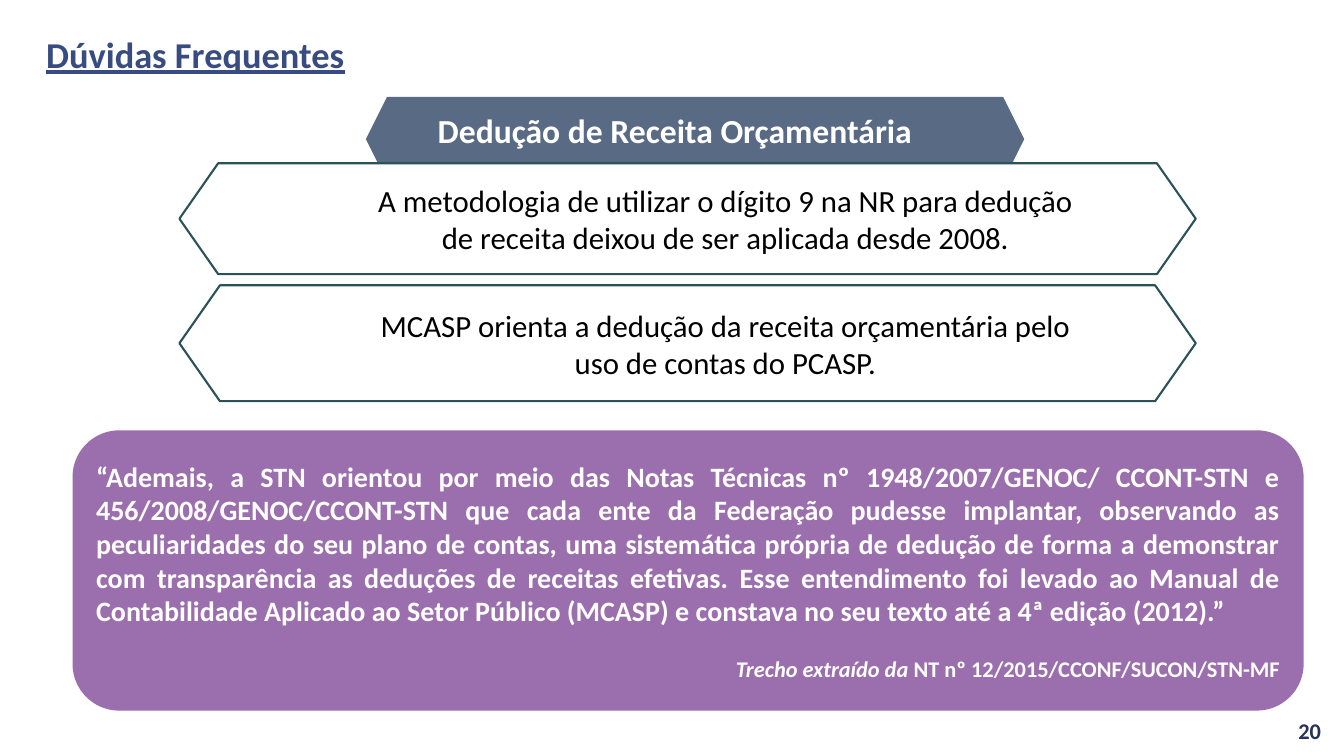
from dataclasses import dataclass

from pptx import Presentation
from pptx import util as u
from pptx.dml.color import RGBColor
from pptx.enum import shapes, text


@dataclass(frozen=True)
class Theme:
    font: str = "Calibri"
    title: str = "384C81"
    number: str = "253356"
    heading_fill: str = "596A85"
    outline: str = "2B5259"
    quote_fill: str = "9B6FAD"
    white: str = "FFFFFF"
    black: str = "000000"
    title_size: int = 26
    heading_size: int = 24
    statement_size: int = 22
    quote_size: int = 20
    small_size: int = 16


@dataclass(frozen=True)
class Box:
    left: float
    top: float
    width: float
    height: float

    def inner(self, left, top, width, height):
        """Return an inner box given in percent of this one."""
        return Box(self.left + self.width * left / 100,
                   self.top + self.height * top / 100,
                   self.width * width / 100, self.height * height / 100)

    def emu(self):
        return [u.Inches(side) for side in
                (self.left, self.top, self.width, self.height)]


THEME = Theme()
SLIDE = Box(0, 0, 13.33, 7.5)
ALIGN = text.PP_ALIGN
ANCHOR = text.MSO_ANCHOR
SHAPE = shapes.MSO_SHAPE

STATEMENTS = [
    (21.85, 36.42, "A metodologia de utilizar o dígito 9 na NR para dedução "
                   "de receita deixou de ser aplicada desde 2008."),
    (61.92, 38.08, "MCASP orienta a dedução da receita orçamentária pelo "
                   "uso de contas do PCASP."),
]
QUOTE = (
    "“Ademais, a STN orientou por meio das Notas Técnicas nº "
    "1948/2007/GENOC/ CCONT-STN e 456/2008/GENOC/CCONT-STN que cada ente da "
    "Federação pudesse implantar, observando as peculiaridades do seu plano "
    "de contas, uma sistemática própria de dedução de forma a demonstrar com "
    "transparência as deduções de receitas efetivas. Esse entendimento foi "
    "levado ao Manual de Contabilidade Aplicado ao Setor Público (MCASP) e "
    "constava no seu texto até a 4ª edição (2012).”"
)


def color(value):
    return RGBColor.from_string(value)


def add_span(para, words, size, ink, bold=True, italic=False, underline=False):
    span = para.add_run()
    span.text = words
    font = span.font
    font.name, font.size, font.color.rgb = THEME.font, u.Pt(size), color(ink)
    font.bold, font.italic, font.underline = bold, italic, underline


def prepare_frame(shape, anchor, align):
    """Set up the text frame and return its first paragraph."""
    frame = shape.text_frame
    frame.word_wrap = True
    frame.vertical_anchor = anchor
    para = frame.paragraphs[0]
    para.alignment = align
    return para


def add_panel(page, box, kind, fill, outline=None):
    panel = page.shapes.add_shape(kind, *box.emu())
    panel.shadow.inherit = False
    panel.fill.solid()
    panel.fill.fore_color.rgb = color(fill)
    if outline:
        panel.line.color.rgb = color(outline)
        panel.line.width = u.Pt(1.5)
    else:
        panel.line.fill.background()
    return panel


def add_label(page, box, words, size, ink, align, underline=False):
    label = page.shapes.add_textbox(*box.emu())
    para = prepare_frame(label, ANCHOR.MIDDLE, align)
    add_span(para, words, size, ink, underline=underline)


def add_statement(page, box, words):
    panel = add_panel(page, box, SHAPE.HEXAGON, THEME.white, THEME.outline)
    panel.adjustments[0] = 0.35
    para = prepare_frame(panel, ANCHOR.MIDDLE, ALIGN.CENTER)
    indent = para._p.get_or_add_pPr()
    indent.set("marL", str(u.Inches(0.75)))
    indent.set("indent", "0")
    add_span(para, words, THEME.statement_size, THEME.black, bold=False)


def add_topic(page, box):
    """Place the heading and the statements that overlap its lower edge."""
    heading = add_panel(page, box.inner(18.35, 0, 64.78, 27.81),
                        SHAPE.HEXAGON, THEME.heading_fill)
    para = prepare_frame(heading, ANCHOR.TOP, ALIGN.LEFT)
    add_span(para, "Dedução de Receita Orçamentária",
             THEME.heading_size, THEME.white)
    for top, height, words in STATEMENTS:
        add_statement(page, box.inner(0, top, 100, height), words)


def add_quote(page, box):
    panel = add_panel(page, box, SHAPE.ROUNDED_RECTANGLE, THEME.quote_fill)
    para = prepare_frame(panel, ANCHOR.MIDDLE, ALIGN.JUSTIFY)
    add_span(para, QUOTE, THEME.quote_size, THEME.white)
    credit = panel.text_frame.add_paragraph()
    credit.alignment = ALIGN.RIGHT
    credit.space_before = u.Pt(19.5)
    add_span(credit, "Trecho extraído da", THEME.small_size, THEME.white,
             italic=True)
    add_span(credit, " NT nº 12/2015/CCONF/SUCON/STN-MF",
             THEME.small_size, THEME.white)


def main():
    deck = Presentation()
    deck.slide_width = u.Inches(SLIDE.width)
    deck.slide_height = u.Inches(SLIDE.height)
    page = deck.slides.add_slide(deck.slide_layouts[6])
    add_label(page, SLIDE.inner(2.7, 0, 86.27, 14.27), "Dúvidas Frequentes",
              THEME.title_size, THEME.title, ALIGN.LEFT, underline=True)
    add_label(page, SLIDE.inner(76.52, 94, 22.51, 5.33), "20",
              THEME.small_size, THEME.number, ALIGN.RIGHT)
    add_topic(page, SLIDE.inner(13.35, 12.8, 75.62, 40.27))
    add_quote(page, SLIDE.inner(5.4, 56.93, 91.6, 37.07))
    deck.save("out.pptx")


if __name__ == "__main__":
    main()
